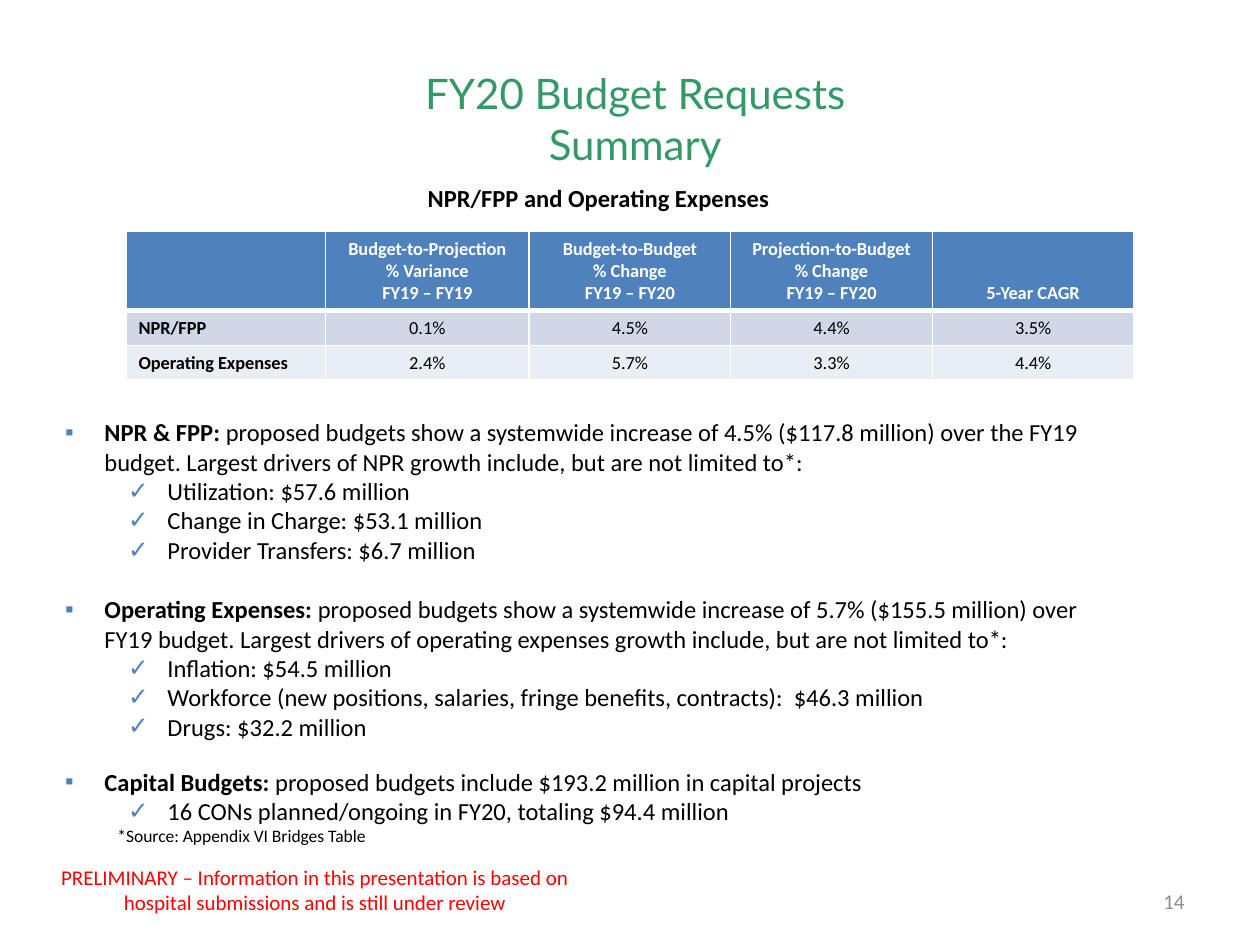
from lxml.etree import SubElement
from pptx import Presentation
from pptx.dml.color import RGBColor
from pptx.enum.text import MSO_ANCHOR, MSO_AUTO_SIZE, PP_ALIGN
from pptx.oxml.ns import qn
from pptx.util import Pt

BLUE, WHITE, BLACK = "4F81BD", "FFFFFF", "000000"
BANDS = ("D0D8E8", "E9EDF4")

HEADING = "NPR/FPP and Operating Expenses"
# Each topic: space before, bold lead, sentence, drivers
TOPICS = [
    (117, "NPR & FPP: ",
     "proposed budgets show a systemwide increase of 4.5% ($117.8 million) over the FY19 "
     "budget. Largest drivers of NPR growth include, but are not limited to*:",
     ["Utilization: $57.6 million", "Change in Charge: $53.1 million",
      "Provider Transfers: $6.7 million"]),
    (17, "Operating Expenses: ",
     "proposed budgets show a systemwide increase of 5.7% ($155.5 million) over FY19 budget. "
     "Largest drivers of operating expenses growth include, but are not limited to*:",
     ["Inflation: $54.5 million",
      "Workforce (new positions, salaries, fringe benefits, contracts):  $46.3 million",
      "Drugs: $32.2 million"]),
    (14.6, "Capital Budgets: ",
     "proposed budgets include $193.2 million in capital projects",
     ["16 CONs planned/ongoing in FY20, totaling $94.4 million"]),
]
ROWS = [
    ["", "Budget-to-Projection\n% Variance\nFY19 – FY19",
     "Budget-to-Budget\n% Change\nFY19 – FY20",
     "Projection-to-Budget\n% Change\nFY19 – FY20", "5-Year CAGR"],
    ["NPR/FPP", "0.1%", "4.5%", "4.4%", "3.5%"],
    ["Operating Expenses", "2.4%", "5.7%", "3.3%", "4.4%"],
]
COL_WIDTHS = [114, 116.4, 115.2, 115.2, 115.2]
ROW_HEIGHTS = [45.6, 19.8, 19.8]


def rgb(color):
    return RGBColor.from_string(color)


class Deck:
    """Holds the text style and the current slide."""

    font = "Calibri"

    def __init__(self, prs):
        self.s = prs.slides.add_slide(prs.slide_layouts[1])

    def style(self, p, size, color=BLACK, bold=False, align=PP_ALIGN.LEFT, font=None):
        p.alignment = align
        for r in p.runs:
            r.font.name = font or self.font
            r.font.size = Pt(size)
            r.font.bold = bold
            r.font.color.rgb = rgb(color)

    def place(self, sp, left, top, width, height):
        sp.left, sp.top, sp.width, sp.height = map(Pt, (left, top, width, height))

    def title(self, text, box, size, color):
        sp = self.s.shapes.title
        self.place(sp, *box)
        tf = sp.text_frame
        tf.text = text
        tf.auto_size = MSO_AUTO_SIZE.NONE
        tf.vertical_anchor = MSO_ANCHOR.MIDDLE
        self.style(tf.paragraphs[0], size, color, align=PP_ALIGN.CENTER, font="Lato")

    def bullet(self, p, char, left, hanging):
        """Give a paragraph a coloured bullet, or none when char is empty."""
        pPr = p._p.get_or_add_pPr()
        pPr.set("marL", str(Pt(left)))
        pPr.set("indent", str(Pt(-hanging)))
        if char:
            SubElement(SubElement(pPr, qn("a:buClr")), qn("a:srgbClr"), val=BLUE)
            SubElement(pPr, qn("a:buChar"), char=char)
        else:
            SubElement(pPr, qn("a:buNone"))

    def body(self, heading, topics, box, size):
        sp = self.s.placeholders[1]
        self.place(sp, *box)
        tf = sp.text_frame
        tf.auto_size = MSO_AUTO_SIZE.NONE
        tf.margin_top = Pt(20.6)
        tf.text = heading
        p = tf.paragraphs[0]
        p.space_before = Pt(0)
        self.bullet(p, "", 0, 0)
        self.style(p, size, bold=True, align=PP_ALIGN.CENTER)
        for gap, lead, sentence, drivers in topics:
            p = tf.add_paragraph()
            p.space_before = Pt(gap)
            self.bullet(p, "▪", 22.5, 22.5)
            for text in (lead, sentence):
                p.add_run().text = text
            self.style(p, size)
            p.runs[0].font.bold = True
            for driver in drivers:
                p = tf.add_paragraph()
                p.text = driver
                p.level = 1
                p.space_before = Pt(0)
                self.bullet(p, "✓", 58.5, 22.5)
                self.style(p, size)

    def borders(self, cell, **widths):
        tcPr = cell._tc.get_or_add_tcPr()
        for side in "LRTB":
            ln = SubElement(tcPr, qn(f"a:ln{side}"), w=str(Pt(widths.get(side, 1))))
            SubElement(SubElement(ln, qn("a:solidFill")), qn("a:srgbClr"), val=WHITE)

    def table(self, rows, left, top, col_widths, row_heights, size):
        table = self.s.shapes.add_table(
            len(rows), len(col_widths), Pt(left), Pt(top),
            Pt(sum(col_widths)), Pt(sum(row_heights))).table
        for col, width in zip(table.columns, col_widths):
            col.width = Pt(width)
        for i, (row, height) in enumerate(zip(rows, row_heights)):
            table.rows[i].height = Pt(height)
            header = i == 0
            for j, text in enumerate(row):
                cell = table.cell(i, j)
                self.borders(cell, T=3 if i == 1 else 1, B=3 if header else 1)
                cell.fill.solid()
                cell.fill.fore_color.rgb = rgb(BLUE if header else BANDS[i - 1])
                cell.text_frame.text = text
                if header:
                    cell.vertical_anchor = MSO_ANCHOR.BOTTOM
                for p in cell.text_frame.paragraphs:
                    self.style(p, size, WHITE if header else BLACK, header or j == 0,
                               PP_ALIGN.CENTER if header or j else PP_ALIGN.LEFT)

    def text(self, text, box, size, color=BLACK, align=PP_ALIGN.LEFT, anchor=MSO_ANCHOR.TOP):
        tf = self.s.shapes.add_textbox(*map(Pt, box)).text_frame
        tf.word_wrap = True
        tf.vertical_anchor = anchor
        tf.text = text
        self.style(tf.paragraphs[0], size, color, align=align)


def main():
    prs = Presentation()
    prs.slide_width, prs.slide_height = Pt(720), Pt(540)
    deck = Deck(prs)
    deck.text("PRELIMINARY – Information in this presentation is based on "
              "hospital submissions and is still under review",
              (12, 490.5, 336, 36), 12, "FF0000", PP_ALIGN.CENTER)
    deck.title("FY20 Budget Requests\vSummary", (12, 42, 702, 51), 24, "339966")
    deck.body(HEADING, TOPICS, (30, 84, 624, 399.6), 14)
    deck.table(ROWS, 72, 132, COL_WIDTHS, ROW_HEIGHTS, 10.5)
    deck.text("*Source: Appendix VI Bridges Table", (60, 468, 624, 19.4), 10)
    deck.text("14", (516, 500.5, 168, 28.8), 12, "8C8C8C", PP_ALIGN.RIGHT, MSO_ANCHOR.MIDDLE)
    prs.save("out.pptx")


if __name__ == "__main__":
    main()
